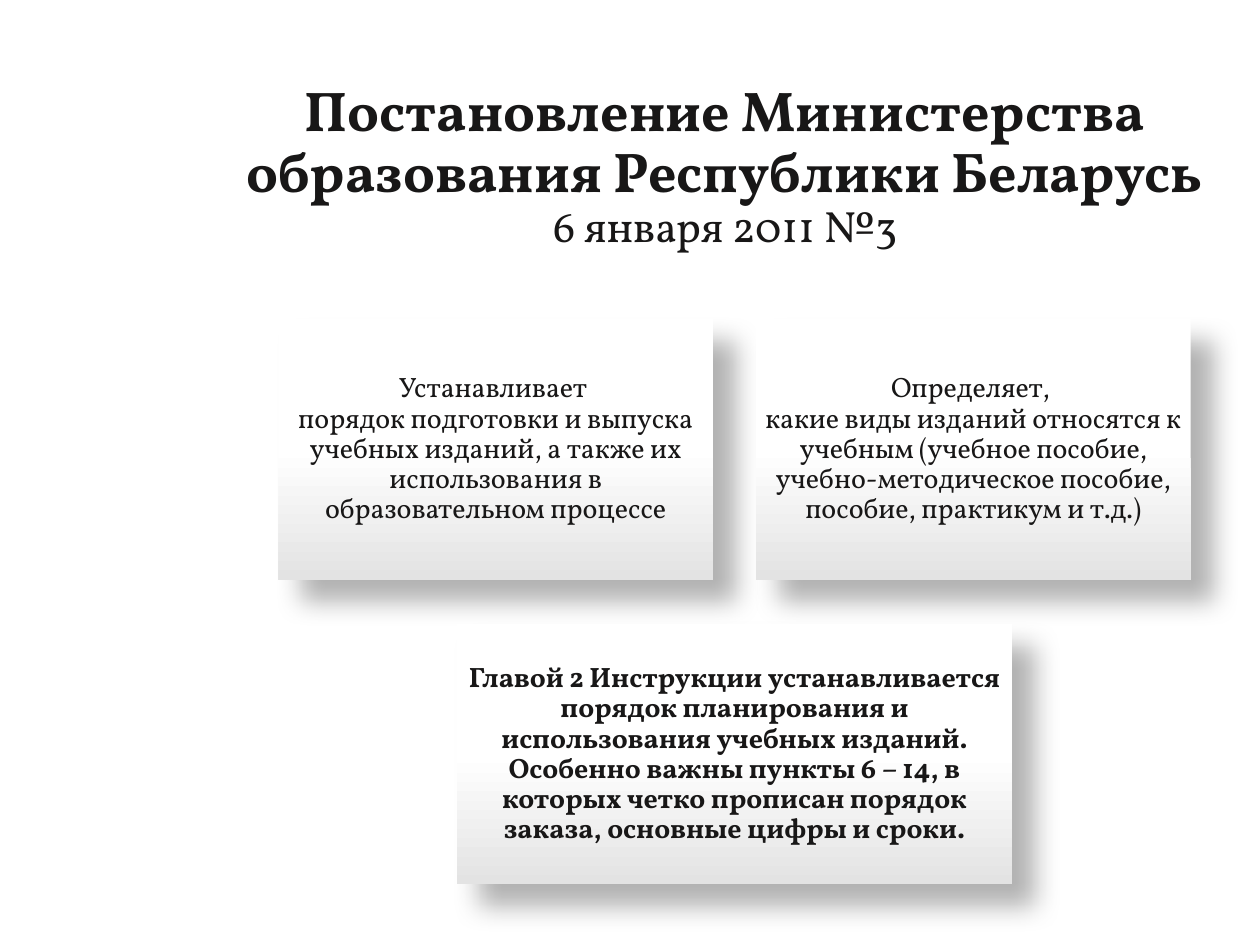
from lxml import etree
from pptx import Presentation, util as u
from pptx.dml.color import RGBColor
from pptx.enum import shapes, text
from pptx.oxml import parse_xml
from pptx.oxml.ns import nsdecls

HUE = {"ink": "181717", "top": "FFFFFF", "base": "E3E3E3", "shade": "000000"}
FONT = "Vollkorn"

deck = Presentation()
deck.slide_width, deck.slide_height = u.Inches(10), u.Inches(7.5)
slide = deck.slides.add_slide(deck.slide_layouts[5])


def write(frame, *lines, size=16, bold=False, inset=0.07):
    """Fill the frame with one centred paragraph; a line may be (text, format dict)."""
    frame.word_wrap = True
    frame.auto_size = text.MSO_AUTO_SIZE.NONE
    frame.vertical_anchor = text.MSO_ANCHOR.MIDDLE
    frame.margin_left = frame.margin_right = u.Inches(inset)
    frame.margin_top = frame.margin_bottom = u.Inches(inset)
    para = frame.paragraphs[0]
    para.alignment = text.PP_ALIGN.CENTER
    para.line_spacing = 0.9
    for i, line in enumerate(lines):
        words, form = line if isinstance(line, tuple) else (line, {})
        if i:
            para.add_line_break()
        run = para.add_run()
        run.text = words
        run.font.name = FONT
        run.font.size = u.Pt(form.get("size", size))
        run.font.bold = form.get("bold", bold)
        run.font.color.rgb = RGBColor.from_string(HUE["ink"])


def shade(shape):
    """Cast a soft shadow down and to the right."""
    shape.shadow.inherit = False
    effects = shape._element.spPr.find("{*}effectLst")
    effects.append(parse_xml(
        f'<a:outerShdw {nsdecls("a")} blurRad="{u.Pt(15)}" dist="{u.Pt(18)}" '
        f'dir="{45 * 60000}" algn="tl" rotWithShape="0">'
        f'<a:srgbClr val="{HUE["shade"]}"><a:alpha val="30000"/></a:srgbClr>'
        '</a:outerShdw>'))


# Two cards share the upper row, a wider one is centred below them
LEFT, WIDE, HIGH, GAP = 2.21, 3.45, 2.07, 0.34
LOW = 4.41
ROWS = [2.53, 2.53 + HIGH + GAP + 0.01]
MID = LEFT + WIDE + GAP / 2
cards = [
    (LEFT, ROWS[0], WIDE, False,
     ["Устанавливает ",
      "порядок подготовки и выпуска учебных изданий, а также их "
      "использования в образовательном процессе"]),
    (LEFT + WIDE + GAP, ROWS[0], WIDE, False,
     ["Определяет, ",
      "какие виды изданий относятся к учебным (учебное пособие, "
      "учебно-методическое пособие, пособие, практикум и т.д.)"]),
    (MID - LOW / 2, ROWS[1], LOW, True,
     ["Главой 2 Инструкции устанавливается порядок планирования и "
      "использования учебных изданий. Особенно важны пункты 6 – 14, в "
      "которых четко прописан порядок заказа, основные цифры и сроки."]),
]

for x, y, wide, bold, lines in cards:
    card = slide.shapes.add_shape(
        shapes.MSO_SHAPE.RECTANGLE, *map(u.Inches, (x, y, wide, HIGH)))
    card.line.fill.background()
    card.fill.gradient()
    card.fill.gradient_angle = 270
    for stop, place, key in zip(card.fill.gradient_stops, (0.5, 1), ("top", "base")):
        stop.position = place
        stop.color.rgb = RGBColor.from_string(HUE[key])
    shade(card)
    write(card.text_frame, *lines, bold=bold)

title = slide.shapes.title
title.left, title.top, title.width, title.height = map(
    u.Inches, (1.74, 0.39, 8.03, 1.88))
write(title.text_frame,
      "Постановление Министерства образования Республики Беларусь",
      ("6 января 2011 №3", {"size": 25, "bold": False}),
      size=32, bold=True, inset=0.05)

deck.save("out.pptx")
